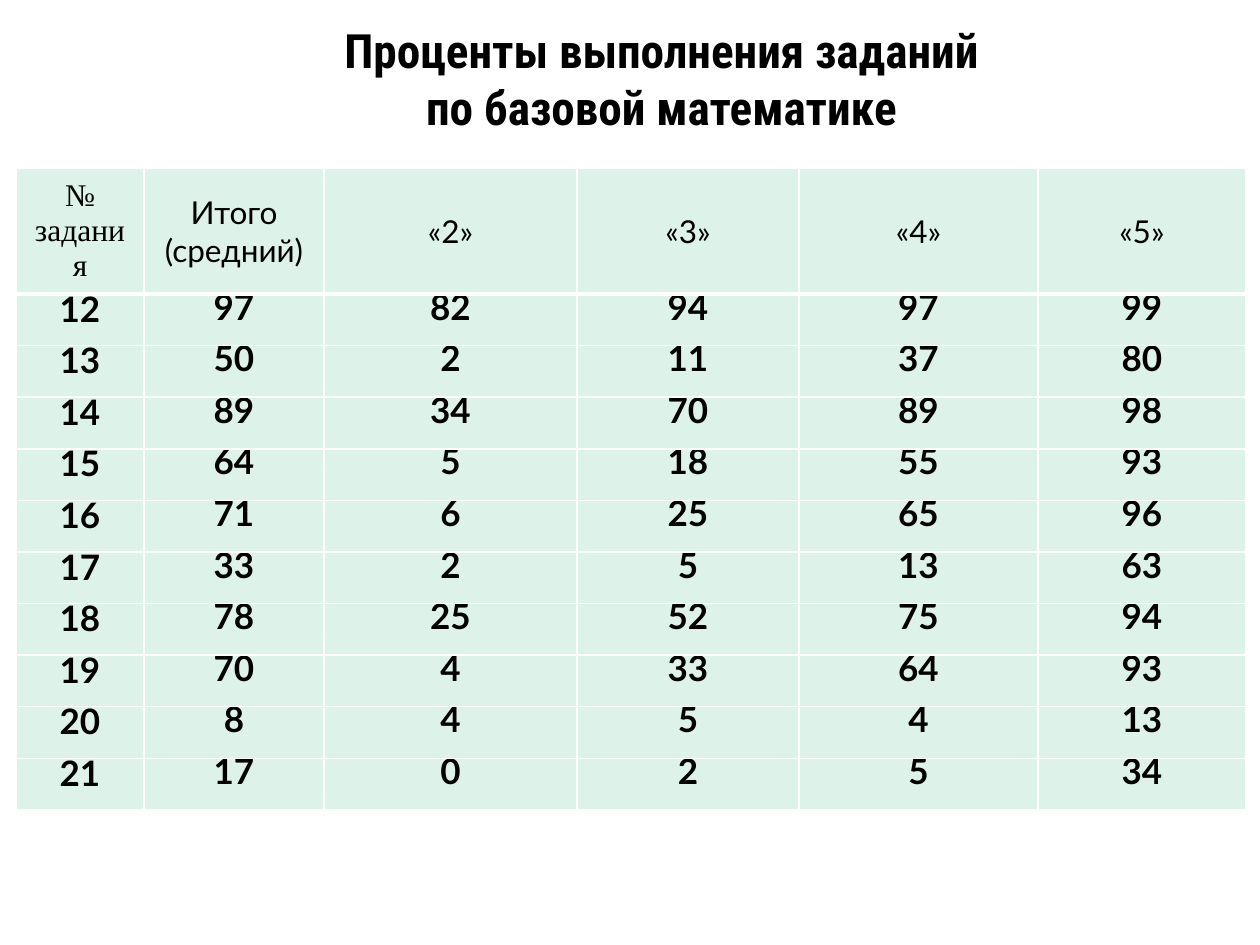
from lxml import etree
from pptx import Presentation, util as u
from pptx.dml.color import RGBColor
from pptx.enum import text
from pptx.oxml.ns import qn

# Content
TITLE = "Проценты выполнения заданий\vпо базовой математике"
HEADER = ["№ задания", "Итого (средний)", "«2»", "«3»", "«4»", "«5»"]
RESULTS = [
    (12, 97, 82, 94, 97, 99),
    (13, 50, 2, 11, 37, 80),
    (14, 89, 34, 70, 89, 98),
    (15, 64, 5, 18, 55, 93),
    (16, 71, 6, 25, 65, 96),
    (17, 33, 2, 5, 13, 63),
    (18, 78, 25, 52, 75, 94),
    (19, 70, 4, 33, 64, 93),
    (20, 8, 4, 5, 4, 13),
    (21, 17, 0, 2, 5, 34),
]

# Layout in px
TITLE_BOX = (63, 21, 1197, 115)
TABLE_LEFT, TABLE_TOP = 16, 168
COLUMNS = [128, 180, 253, 222, 239, 208]
HEADER_H, BODY_H = 126, 516

# Formats
BLACK = RGBColor(0x00, 0x00, 0x00)
WHITE = RGBColor(0xFF, 0xFF, 0xFF)
MINT = RGBColor(0xDD, 0xF3, 0xEA)
CENTER = {"alignment": text.PP_ALIGN.CENTER}
TIGHT = {**CENTER, "line_spacing": u.Pt(9), "space_before": u.Pt(1.4)}
TITLE_FONT = {"name": "Roboto Condensed", "size": u.Pt(27), "bold": True}
HEAD_FONT = {"name": "Lato", "size": u.Pt(18), "bold": False}
TASK_HEAD_FONT = {**HEAD_FONT, "name": "Times New Roman"}
BODY_FONT = {"name": "Lato", "size": u.Pt(20), "bold": True}
SIDES = ("left", "top", "right", "bottom")


def px(n):
    return round(n * 914400 / 126)


def apply(obj, values):
    for name, value in values.items():
        setattr(obj, name, value)


def write(tf, content, para, font):
    p = tf.paragraphs[0]
    apply(p, para)
    p.text = content
    for r in p.runs:
        apply(r.font, font)
        r.font.color.rgb = BLACK


def add_borders(cell, bottom, top):
    tcPr = cell._tc.get_or_add_tcPr()
    for tag, width in (("a:lnL", 1), ("a:lnR", 1), ("a:lnT", top), ("a:lnB", bottom)):
        ln = etree.SubElement(tcPr, qn(tag), w=str(u.Pt(width)))
        fill = etree.SubElement(ln, qn("a:solidFill"))
        etree.SubElement(fill, qn("a:srgbClr"), val=str(WHITE))


prs = Presentation()
prs.slide_width, prs.slide_height = u.Inches(10), u.Inches(7.5)
s = prs.slides.add_slide(prs.slide_layouts[6])

# Title
tf = s.shapes.add_textbox(*map(px, TITLE_BOX)).text_frame
tf.word_wrap = True
tf.vertical_anchor = text.MSO_ANCHOR.MIDDLE
write(tf, TITLE, CENTER, TITLE_FONT)

# Table grid
rows = [HEADER, *RESULTS]
table = s.shapes.add_table(
    len(rows), len(COLUMNS), px(TABLE_LEFT), px(TABLE_TOP),
    px(sum(COLUMNS)), px(HEADER_H + BODY_H)).table
for column, width in zip(table.columns, COLUMNS):
    column.width = px(width)
for i, row in enumerate(table.rows):
    row.height = px(BODY_H / len(RESULTS) if i else HEADER_H)

# Table cells
for i, values in enumerate(rows):
    for j, value in enumerate(values):
        cell = table.cell(i, j)
        add_borders(cell, bottom=1 if i else 3, top=3 if i == 1 else 1)
        cell.fill.solid()
        cell.fill.fore_color.rgb = MINT
        cell.vertical_anchor = text.MSO_ANCHOR.MIDDLE
        if j == 0:
            insets = (13, 10 if i else 6, 13, 6)
        else:
            insets = (1, 0 if i else 1, 1, 0)
        apply(cell, {f"margin_{side}": px(n) for side, n in zip(SIDES, insets)})
        if i:
            write(cell.text_frame, str(value), TIGHT, BODY_FONT)
        else:
            write(cell.text_frame, value, CENTER, HEAD_FONT if j else TASK_HEAD_FONT)

prs.save("out.pptx")
